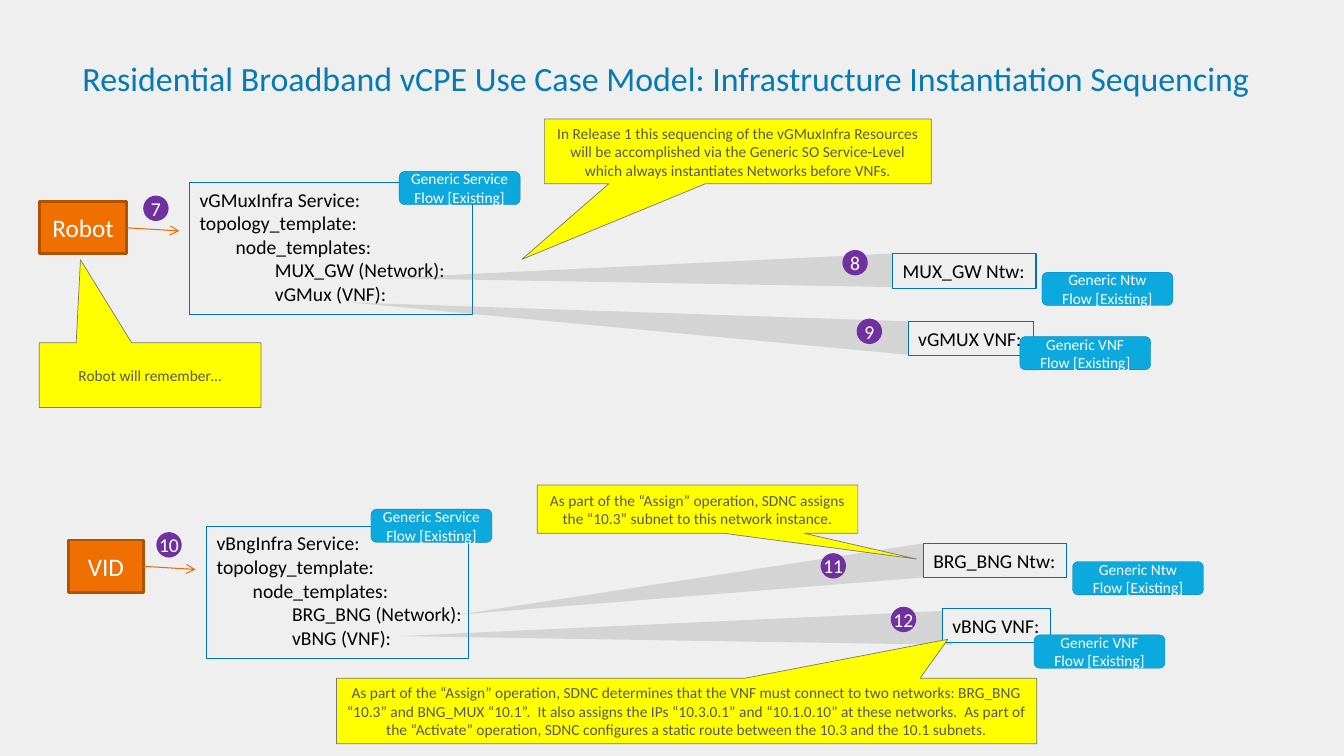
import pptx
import pptx.util
import pptx.dml.color
import pptx.enum.shapes
import pptx.enum.text
import pptx.oxml.ns
import lxml.etree

Cm = pptx.util.Cm
Pt = pptx.util.Pt
RGB = pptx.dml.color.RGBColor
KIND = pptx.enum.shapes.MSO_SHAPE
ALIGN = pptx.enum.text.PP_ALIGN
ANCHOR = pptx.enum.text.MSO_ANCHOR
qn = pptx.oxml.ns.qn

PAPER = RGB(0xEF, 0xEF, 0xEF)
BLACK = RGB(0, 0, 0)
WHITE = RGB(0xFF, 0xFF, 0xFF)
BLUE = RGB(0x00, 0x70, 0xC0)
NAVY = RGB(0x06, 0x7A, 0xB4)
SKY = RGB(0x0C, 0xA9, 0xDF)
ORANGE = RGB(0xEF, 0x6F, 0x00)
RUST = RGB(0xB1, 0x52, 0x00)
AMBER = RGB(0xEA, 0x6D, 0x00)
PURPLE = RGB(0x70, 0x30, 0xA0)
YELLOW = RGB(0xFF, 0xFF, 0x00)
GRAY = RGB(0x80, 0x80, 0x80)
EDGE = RGB(0x78, 0x78, 0x78)
INK = RGB(0x59, 0x59, 0x59)

TITLE = "Residential Broadband vCPE Use Case Model: Infrastructure Instantiation Sequencing"

SERVICES = [
    ((4.78, 4.6, 7.14, 3.33), "vGMuxInfra Service:", "MUX_GW (Network):", "vGMux (VNF):"),
    ((5.21, 13.26, 6.6, 3.33), "vBngInfra Service:", "BRG_BNG (Network):", "vBNG (VNF):"),
]
INDENTS = [0, 0, 0.91, 1.9, 1.9]

ACTORS = [("Robot", 0.99, 5.08, 2.21), ("VID", 1.73, 13.61, 1.88)]

BEAMS = [
    ((9.7, 7.01), (22.66, 6.38)),
    ((8.81, 7.62), (22.96, 8.1)),
    ((11.56, 15.49), (23.42, 13.67)),
    ((10.06, 16.03), (23.88, 15.39)),
]

LABELS = [
    ("MUX_GW Ntw:", 22.5, 6.4, 3.61),
    ("vGMUX VNF:", 22.89, 8.1, 3.15),
    ("BRG_BNG Ntw:", 23.27, 13.69, 3.61),
    ("vBNG VNF:", 23.75, 15.34, 2.72),
]

STEPS = [
    ("7", 3.61, 4.93), ("8", 21.23, 6.3), ("9", 21.59, 8.03),
    ("10", 3.94, 13.41), ("11", 20.68, 13.94), ("12", 22.45, 15.29),
]

FLOWS = [
    ("Generic Service Flow [Existing]", 10.06, 4.32, 3.05),
    ("Generic Service Flow [Existing]", 9.35, 12.83, 3.05),
    ("Generic Ntw\nFlow [Existing]", 26.26, 6.86, 3.3),
    ("Generic VNF\nFlow [Existing]", 25.7, 8.48, 3.3),
    ("Generic Ntw\nFlow [Existing]", 27.03, 14.15, 3.3),
    ("Generic VNF\nFlow [Existing]", 26.06, 16.0, 3.3),
]

NOTES = [
    ((13.72, 3.0, 9.75, 1.63), (-0.558, 1.669),
     "In Release 1 this sequencing of the vGMuxInfra Resources will be accomplished via "
     "the Generic SO Service-Level which always instantiates Networks before VNFs."),
    ((0.99, 8.64, 5.59, 1.63), (-0.314, -1.785), "Robot will remember…"),
    ((13.54, 12.22, 8.08, 1.22), (0.683, 1.031),
     "As part of the “Assign” operation, SDNC assigns the “10.3” subnet to this network instance."),
    ((8.48, 17.09, 17.65, 1.65), (0.373, -1.094),
     "As part of the “Assign” operation, SDNC determines that the VNF must connect to two "
     "networks: BRG_BNG “10.3” and BNG_MUX “10.1”.  It also assigns the IPs “10.3.0.1” and "
     "“10.1.0.10” at these networks.  As part of the “Activate” operation, SDNC configures "
     "a static route between the 10.3 and the 10.1 subnets."),
]

deck = pptx.Presentation()
deck.slide_width, deck.slide_height = Cm(33.87), Cm(19.05)
slide = deck.slides.add_slide(deck.slide_layouts[6])
slide.background.fill.solid()
slide.background.fill.fore_color.rgb = PAPER
shapes = slide.shapes


def write(shape, *text, size=14, color=BLACK, align=ALIGN.LEFT, anchor=ANCHOR.TOP,
          wrap=True, sides=(0.25, 0.25), ends=0.13, indents=None):
    frame = shape.text_frame
    frame.word_wrap = wrap
    frame.vertical_anchor = anchor
    frame.margin_left, frame.margin_right = map(Cm, sides)
    frame.margin_top = frame.margin_bottom = Cm(ends)
    for i, line in enumerate(text):
        para = frame.paragraphs[0] if i == 0 else frame.add_paragraph()
        para.text = line
        para.alignment = align
        if indents:
            para._p.get_or_add_pPr().set("marL", str(Cm(indents[i])))
        for run in para.runs:
            run.font.name = "Calibri"
            run.font.size = Pt(size)
            run.font.color.rgb = color


def paint(shape, fill, edge=None, width=0.75):
    shape.shadow.inherit = False
    shape.fill.solid()
    shape.fill.fore_color.rgb = fill
    if edge is None:
        shape.line.fill.background()
    else:
        shape.line.color.rgb = edge
        shape.line.width = Pt(width)


def block(kind, place, fill, edge=None, width=0.75):
    shape = shapes.add_shape(kind, *map(Cm, place))
    paint(shape, fill, edge, width)
    return shape


def arrow(x, y):
    link = shapes.add_connector(pptx.enum.shapes.MSO_CONNECTOR.STRAIGHT,
                                Cm(x), Cm(y), Cm(x + 1.32), Cm(y + 0.08))
    link.line.color.rgb = AMBER
    link.line.width = Pt(0.75)
    lxml.etree.SubElement(link.line._get_or_add_ln(), qn("a:tailEnd"), type="arrow")
    lxml.etree.SubElement(link._element.spPr, qn("a:effectLst"))


def beam(tip, top):
    x, y = top
    pen = shapes.build_freeform(Cm(x), Cm(y), scale=1.0)
    ends = [tip, (x + 0.13, y + 0.86)]
    pen.add_line_segments([(Cm(a), Cm(b)) for a, b in ends], close=True)
    shape = pen.convert_to_shape()
    paint(shape, GRAY)
    tint = shape._element.spPr.find(qn("a:solidFill"))[0]
    lxml.etree.SubElement(tint, qn("a:alpha"), val="24000")


def main():
    title = shapes.add_textbox(Cm(2.08), Cm(1.45), Cm(30.96), Cm(1.27))
    write(title, TITLE, size=24.2, color=NAVY, sides=(0, 0), ends=0)

    for place, name, net, vnf in SERVICES:
        box = block(KIND.RECTANGLE, place, PAPER, BLUE)
        write(box, name, "topology_template:", "node_templates:", net, vnf,
              sides=(0.25, 0), indents=INDENTS)

    for name, x, y, w in ACTORS:
        box = block(KIND.RECTANGLE, (x, y, w, 1.32), ORANGE, RUST, 2)
        write(box, name, size=18, color=WHITE, align=ALIGN.CENTER, anchor=ANCHOR.MIDDLE)
        arrow(x + w, y + 0.66)

    for tip, top in BEAMS:
        beam(tip, top)

    for name, x, y, w in LABELS:
        write(block(KIND.RECTANGLE, (x, y, w, 0.86), PAPER, BLUE), name, sides=(0.25, 0))

    for num, x, y in STEPS:
        write(block(KIND.OVAL, (x, y, 0.64, 0.64), PURPLE), num, color=WHITE,
              align=ALIGN.CENTER, anchor=ANCHOR.MIDDLE, wrap=False, sides=(0, 0), ends=0)

    for name, x, y, w in FLOWS:
        pill = block(KIND.ROUNDED_RECTANGLE, (x, y, w, 0.84), SKY, NAVY, 0.25)
        write(pill, name, size=11, color=WHITE, align=ALIGN.CENTER, anchor=ANCHOR.MIDDLE)

    for place, tip, text in NOTES:
        note = block(KIND.RECTANGULAR_CALLOUT, place, YELLOW, EDGE, 0.5)
        note.adjustments[0], note.adjustments[1] = tip
        write(note, text, size=11, color=INK, align=ALIGN.CENTER, anchor=ANCHOR.MIDDLE)

    deck.save("out.pptx")


if __name__ == "__main__":
    main()
